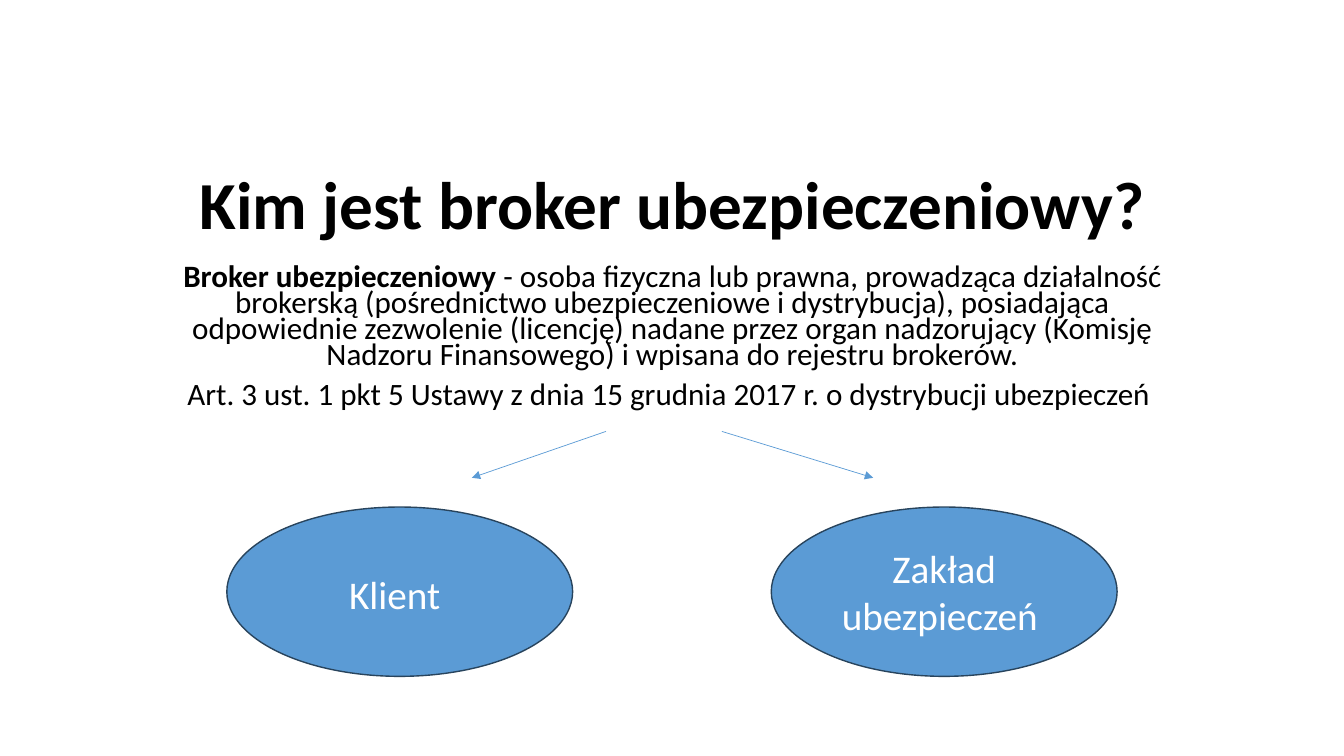
"""Build a slide that explains who an insurance broker is."""
from dataclasses import dataclass

from lxml import etree
from pptx import Presentation
from pptx import util as u
from pptx.dml.color import RGBColor
from pptx.enum import shapes, text
from pptx.oxml.ns import qn


@dataclass(frozen=True)
class Theme:
    font: str = "Calibri"
    ink: RGBColor = RGBColor(0, 0, 0)
    light: RGBColor = RGBColor(255, 255, 255)
    accent: RGBColor = RGBColor(0x5B, 0x9B, 0xD5)
    outline: RGBColor = RGBColor(0x28, 0x44, 0x5D)
    title_size: float = 48
    body_size: float = 22.2
    label_size: float = 28
    label_end_size: float = 32


THEME = Theme()
DEFINITION = [
    [
        ("Broker ubezpieczeniowy", True),
        (" - osoba fizyczna lub prawna, prowadząca działalność brokerską "
         "(pośrednictwo ubezpieczeniowe i dystrybucja), posiadająca odpowiednie "
         "zezwolenie (licencję) nadane przez organ nadzorujący (Komisję Nadzoru "
         "Finansowego) i wpisana do rejestru brokerów.", False),
    ],
    [("Art. 3 ust. 1 pkt 5 Ustawy z dnia 15 grudnia 2017 r. "
      "o dystrybucji ubezpieczeń ", False)],
]
PARTIES = [
    (2.25, [("Klient", THEME.label_size), (" ", THEME.label_end_size)]),
    (7.65, [("Zakład ubezpieczeń ", THEME.label_size)]),
]
ARROWS = [(7.16, 8.66), (6.01, 4.68)]


def place(shape, left, top, width, height):
    shape.left, shape.top = u.Inches(left), u.Inches(top)
    shape.width, shape.height = u.Inches(width), u.Inches(height)


def format_paragraph(paragraph, size, color, spacing=1.0):
    paragraph.alignment = text.PP_ALIGN.CENTER
    paragraph.line_spacing = spacing
    paragraph.font.name = THEME.font
    paragraph.font.size = u.Pt(size)
    paragraph.font.color.rgb = color


def fill_title(shape):
    place(shape, 1.67, 1.23, 10, 1.24)
    frame = shape.text_frame
    frame.text = "Kim jest broker ubezpieczeniowy?"
    frame.auto_size = text.MSO_AUTO_SIZE.NONE
    frame.vertical_anchor = text.MSO_ANCHOR.BOTTOM
    format_paragraph(frame.paragraphs[0], THEME.title_size, THEME.ink, 0.9)
    frame.paragraphs[0].font.bold = True


def fill_definition(shape):
    place(shape, 1.67, 2.59, 10, 1.57)
    frame = shape.text_frame
    frame.auto_size = text.MSO_AUTO_SIZE.NONE
    frame.vertical_anchor = text.MSO_ANCHOR.TOP
    for index, runs in enumerate(DEFINITION):
        paragraph = frame.add_paragraph() if index else frame.paragraphs[0]
        format_paragraph(paragraph, THEME.body_size, THEME.ink, 0.7)
        paragraph.space_before = u.Pt(10 if index else 0)
        for words, bold in runs:
            run = paragraph.add_run()
            run.text = words
            run.font.bold = bold


def add_party(slide, left, runs):
    shape = slide.shapes.add_shape(
        shapes.MSO_SHAPE.OVAL, u.Inches(left), u.Inches(5.03),
        u.Inches(3.43), u.Inches(1.68))
    shape.shadow.inherit = False
    shape.fill.solid()
    shape.fill.fore_color.rgb = THEME.accent
    shape.line.color.rgb = THEME.outline
    shape.line.width = u.Pt(1)
    frame = shape.text_frame
    frame.word_wrap = True
    frame.vertical_anchor = text.MSO_ANCHOR.MIDDLE
    format_paragraph(frame.paragraphs[0], THEME.label_size, THEME.light)
    for words, size in runs:
        run = frame.paragraphs[0].add_run()
        run.text = words
        run.font.size = u.Pt(size)


def add_arrow(slide, start, end):
    arrow = slide.shapes.add_connector(
        shapes.MSO_CONNECTOR.STRAIGHT, u.Inches(start), u.Inches(4.28),
        u.Inches(end), u.Inches(4.74))
    arrow.line.color.rgb = THEME.accent
    arrow.line.width = u.Pt(0.5)
    etree.SubElement(arrow.line._get_or_add_ln(), qn("a:tailEnd"), type="triangle")
    etree.SubElement(arrow._element.spPr, qn("a:effectLst"))


def main():
    presentation = Presentation()
    presentation.slide_width = u.Inches(13.33)
    presentation.slide_height = u.Inches(7.5)
    slide = presentation.slides.add_slide(presentation.slide_layouts[0])
    fill_title(slide.shapes.title)
    fill_definition(slide.placeholders[1])
    for left, runs in PARTIES:
        add_party(slide, left, runs)
    for start, end in ARROWS:
        add_arrow(slide, start, end)
    presentation.save("out.pptx")


if __name__ == "__main__":
    main()
